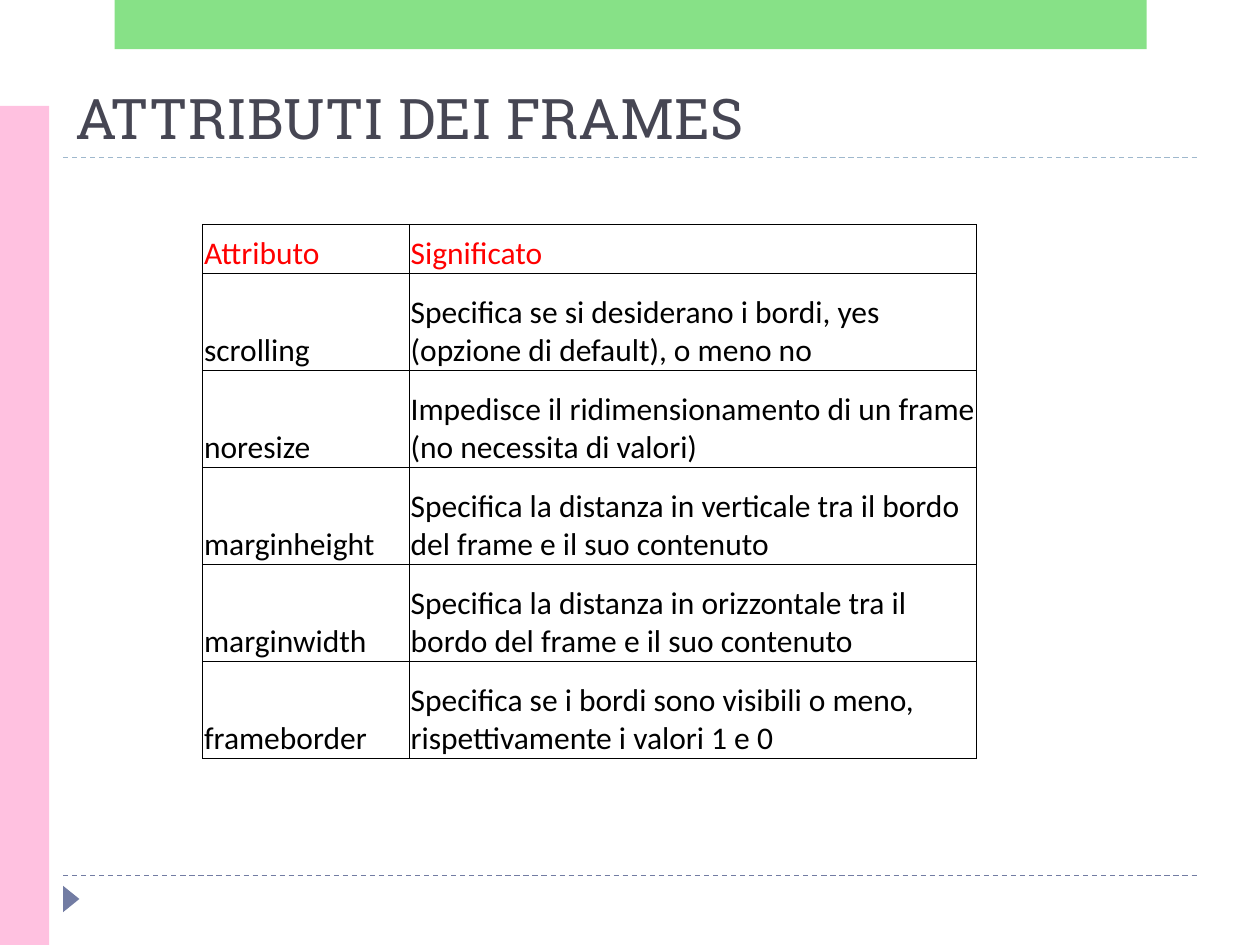
from pptx import Presentation
from pptx.dml.color import RGBColor
from pptx.enum.dml import MSO_LINE
from pptx.enum.shapes import MSO_CONNECTOR, MSO_SHAPE
from pptx.enum.text import MSO_ANCHOR, PP_ALIGN
from pptx.oxml.ns import qn
from pptx.util import Inches, Pt
from lxml.etree import SubElement as Sub

# Content
TITLE = "ATTRIBUTI DEI FRAMES"
ROWS = [
    ("Attributo", "Significato"),
    ("scrolling", "Specifica se si desiderano i bordi, yes (opzione di default), o meno no"),
    ("noresize", "Impedisce il ridimensionamento di un frame (no necessita di valori)"),
    ("marginheight", "Specifica la distanza in verticale tra il bordo del frame e il suo contenuto"),
    ("marginwidth", "Specifica la distanza in orizzontale tra il bordo del frame e il suo contenuto"),
    ("frameborder", "Specifica se i bordi sono visibili o meno, rispettivamente i valori 1 e 0"),
]

# Colours and sizes
BLACK = RGBColor(0x00, 0x00, 0x00)
RED = RGBColor(0xFF, 0x00, 0x00)
SLATE = RGBColor(0x46, 0x46, 0x53)
BLUE = RGBColor(0x72, 0x7C, 0xA3)
PALE = RGBColor(0x9F, 0xB8, 0xCD)
PINK = RGBColor(0xFF, 0xC1, 0xE0)
GREEN = RGBColor(0x62, 0xD8, 0x62)
WHITE = RGBColor(0xFF, 0xFF, 0xFF)
COLS = (1.64, 4.5)
HEAD_H, ROW_H = 0.39, 0.77


def add_rule(slide, y, color):
    rule = slide.shapes.add_connector(
        MSO_CONNECTOR.STRAIGHT, Inches(0.5), Inches(y), Inches(9.5), Inches(y))
    rule.line.color.rgb = color
    rule.line.width = Pt(0.75)
    rule.line.dash_style = MSO_LINE.DASH
    Sub(rule._element.spPr, qn("a:effectLst"))


def add_block(slide, kind, box, color):
    block = slide.shapes.add_shape(kind, *map(Inches, box))
    block.shadow.inherit = False
    block.fill.solid()
    block.fill.fore_color.rgb = color
    block.line.fill.background()
    return block


def add_borders(cell):
    props = cell._tc.get_or_add_tcPr()
    for i, side in enumerate(("lnL", "lnR", "lnT", "lnB")):
        line = props.makeelement(qn(f"a:{side}"), {"w": str(Pt(0.5))})
        fill = Sub(line, qn("a:solidFill"))
        Sub(fill, qn("a:srgbClr"), val=str(BLACK))
        props.insert(i, line)


def fill_cell(cell, text, color):
    cell.text = text
    cell.vertical_anchor = MSO_ANCHOR.BOTTOM
    cell.margin_left = cell.margin_right = cell.margin_top = Inches(0.01)
    cell.margin_bottom = 0
    cell.fill.background()
    font = cell.text_frame.paragraphs[0].runs[0].font
    font.name, font.size, font.bold = "Calibri", Pt(18), False
    font.color.rgb = color
    add_borders(cell)


def main():
    prs = Presentation()
    prs.slide_width, prs.slide_height = Inches(10), Inches(7.5)
    slide = prs.slides.add_slide(prs.slide_layouts[5])
    slide.background.fill.solid()
    slide.background.fill.fore_color.rgb = WHITE

    # Rules, marker and colour bars
    add_rule(slide, 6.95, BLUE)
    add_rule(slide, 1.25, PALE)
    mark = add_block(slide, MSO_SHAPE.ISOSCELES_TRIANGLE, (0.46, 7.07, 0.21, 0.13), BLUE)
    mark.rotation = 90
    add_block(slide, MSO_SHAPE.RECTANGLE, (0, 0.84, 0.39, 6.66), PINK)
    bar = add_block(slide, MSO_SHAPE.RECTANGLE, (0.91, 0, 8.19, 0.39), GREEN)
    tint = bar._element.spPr.find(qn("a:solidFill"))[0]
    Sub(tint, qn("a:alpha"), val="76000")

    # Title
    title = slide.shapes.title
    title.left, title.top, title.width, title.height = map(Inches, (0.5, 0.55, 9, 0.7))
    frame = title.text_frame
    frame.text = TITLE
    frame.vertical_anchor = MSO_ANCHOR.BOTTOM
    para = frame.paragraphs[0]
    para.alignment = PP_ALIGN.LEFT
    font = para.runs[0].font
    font.name, font.size = "Roboto Slab", Pt(32)
    font.color.rgb = SLATE

    # Table of attributes
    high = HEAD_H + ROW_H * (len(ROWS) - 1)
    table = slide.shapes.add_table(
        len(ROWS), len(COLS), Inches(1.61), Inches(1.78),
        Inches(sum(COLS)), Inches(high)).table
    table.horz_banding = False
    for col, wide in zip(table.columns, COLS):
        col.width = Inches(wide)
    for r, row in enumerate(ROWS):
        table.rows[r].height = Inches(ROW_H if r else HEAD_H)
        for c, text in enumerate(row):
            fill_cell(table.cell(r, c), text, BLACK if r else RED)

    prs.save("out.pptx")


if __name__ == "__main__":
    main()
